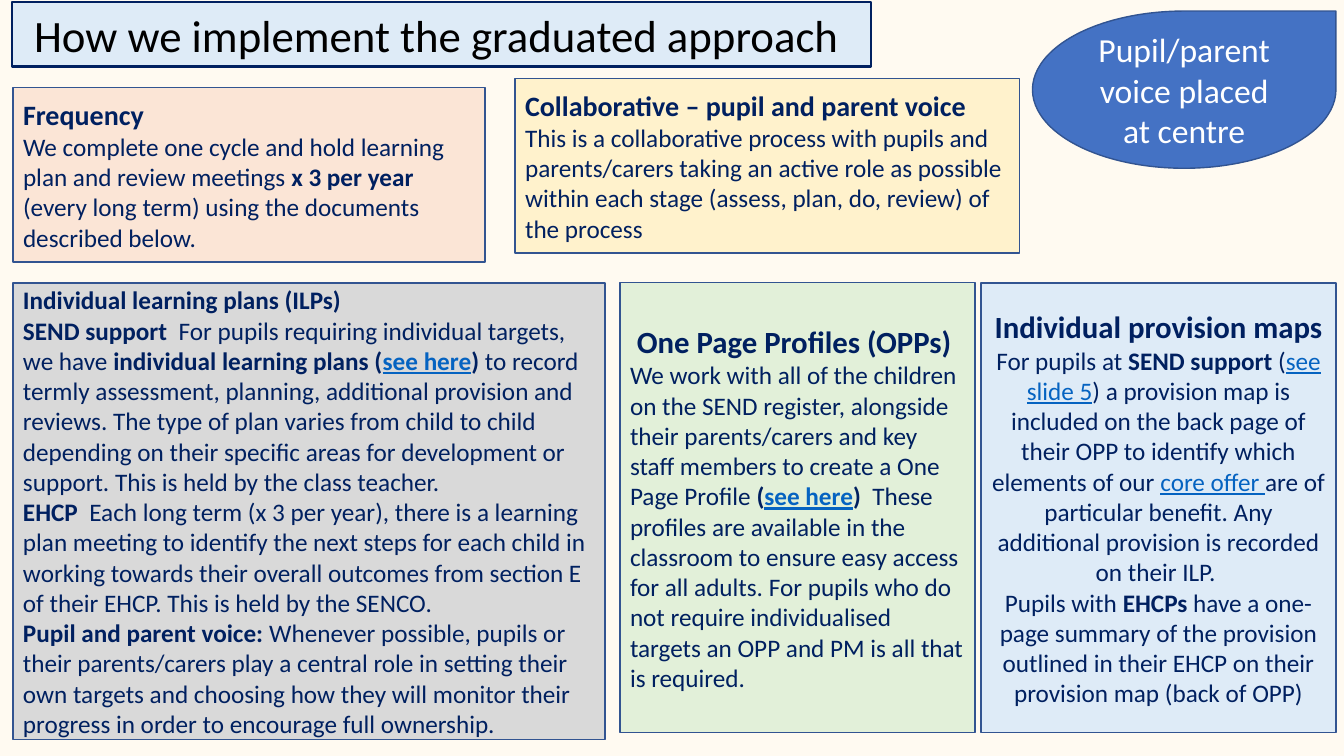
from pptx import Presentation
from pptx.dml.color import RGBColor
from pptx.enum.shapes import MSO_SHAPE
from pptx.enum.text import MSO_ANCHOR, MSO_AUTO_SIZE, PP_ALIGN
from pptx.util import Inches, Pt

CREAM = RGBColor(0xFF, 0xFA, 0xF1)
NAVY = RGBColor(0x00, 0x20, 0x60)
BLACK = RGBColor(0x00, 0x00, 0x00)
WHITE = RGBColor(0xFF, 0xFF, 0xFF)
BLUE = RGBColor(0x44, 0x72, 0xC4)
OUTLINE = RGBColor(0x32, 0x54, 0x91)
LINK = RGBColor(0x05, 0x63, 0xC1)
PALE_BLUE = RGBColor(0xDE, 0xEB, 0xF7)
PEACH = RGBColor(0xFB, 0xE5, 0xD6)
YELLOW = RGBColor(0xFF, 0xF2, 0xCC)
GREEN = RGBColor(0xE2, 0xF0, 0xD9)
GREY = RGBColor(0xD9, 0xD9, 0xD9)

PLAIN, BOLD, LINKED, BOLD_LINKED = "", "b", "u", "bu"

FREQUENCY = [
    [("We complete one cycle and hold learning plan and review meetings ", PLAIN),
     ("x 3 per year ", BOLD),
     ("(every long term) using the documents described below.", PLAIN)],
]
COLLABORATIVE = [
    [("This is a collaborative process with pupils and parents/carers taking an active role "
      "as possible within each stage (assess, plan, do, review) of the process", PLAIN)],
]
PROVISION_MAPS = [
    [("For pupils at ", PLAIN), ("SEND support ", BOLD), ("(", PLAIN), ("see slide 5", LINKED),
     (") a provision map is included on the back page of their OPP to identify which "
      "elements of our ", PLAIN),
     ("core offer ", LINKED),
     ("are of particular benefit. Any additional provision is recorded on their ILP. ", PLAIN)],
    [("Pupils with ", PLAIN), ("EHCPs ", BOLD),
     ("have a one-page summary of the provision outlined in their EHCP on their "
      "provision map (back of OPP)", PLAIN)],
]
ONE_PAGE_PROFILES = [
    [("We work with all of the children on the SEND register, alongside their parents/carers "
      "and key staff members to create a One Page Profile ", PLAIN),
     ("(", BOLD), ("see here", BOLD_LINKED), (") ", BOLD),
     (" These profiles are available in the classroom to ensure easy access for all adults. "
      "For pupils who do not require individualised targets an OPP and PM is all that is "
      "required.", PLAIN)],
]
LEARNING_PLANS = [
    [("SEND support  ", BOLD), ("For pupils requiring individual targets, we have ", PLAIN),
     ("individual learning plans (", BOLD), ("see here", BOLD_LINKED), (") ", BOLD),
     ("to record termly assessment, planning, additional provision and reviews. The type of "
      "plan varies from child to child depending on their specific areas for development or "
      "support. This is held by the class teacher.", PLAIN)],
    [("EHCP  ", BOLD),
     ("Each long term (x 3 per year), there is a learning plan meeting to identify the next "
      "steps for each child in working towards their overall outcomes from section E of their "
      "EHCP. This is held by the SENCO.", PLAIN)],
    [("Pupil and parent voice: ", BOLD),
     ("Whenever possible, pupils or their parents/carers play a central role in setting their "
      "own targets and choosing how they will monitor their progress in order to encourage "
      "full ownership.", PLAIN)],
]


def add_text(paragraph, text, size=18, color=NAVY, bold=False, underline=False):
    """Append one formatted run to a paragraph."""
    run = paragraph.add_run()
    run.text = text
    font = run.font
    font.name = "Calibri"
    font.size = Pt(size)
    font.color.rgb = color
    font.bold = bold
    font.underline = underline


def style_box(shape, fill, line, width):
    """Give a shape its fill, outline and text frame settings."""
    shape.fill.solid()
    shape.fill.fore_color.rgb = fill
    shape.line.color.rgb = line
    shape.line.width = Pt(width)
    frame = shape.text_frame
    frame.word_wrap = True
    frame.auto_size = MSO_AUTO_SIZE.NONE
    frame.vertical_anchor = MSO_ANCHOR.MIDDLE


def add_box(slide, kind, box, fill):
    """Add an outlined preset shape in the given box."""
    shape = slide.shapes.add_shape(kind, *map(Inches, box))
    shape.shadow.inherit = False
    style_box(shape, fill, OUTLINE, 1)
    return shape


def add_title(slide, box):
    """Place the slide title in its framed banner."""
    title = slide.shapes.title
    title.left, title.top, title.width, title.height = map(Inches, box)
    style_box(title, PALE_BLUE, NAVY, 1.75)
    paragraph = title.text_frame.paragraphs[0]
    paragraph.alignment = PP_ALIGN.CENTER
    add_text(paragraph, "How we implement the graduated approach ", size=32, color=BLACK)


def add_voice_callout(slide, box):
    """Place the teardrop about pupil and parent voice."""
    teardrop = add_box(slide, MSO_SHAPE.TEAR, box, BLUE)
    paragraph = teardrop.text_frame.paragraphs[0]
    paragraph.alignment = PP_ALIGN.CENTER
    add_text(paragraph, "Pupil/parent voice placed at centre", size=24, color=WHITE)


def add_panel(slide, box, fill, heading, body, heading_size=20,
              heading_align=PP_ALIGN.LEFT, body_align=PP_ALIGN.LEFT):
    """Place a coloured panel with a bold heading and body paragraphs."""
    frame = add_box(slide, MSO_SHAPE.RECTANGLE, box, fill).text_frame
    paragraph = frame.paragraphs[0]
    paragraph.alignment = heading_align
    add_text(paragraph, heading, size=heading_size, bold=True)
    for runs in body:
        paragraph = frame.add_paragraph()
        paragraph.alignment = body_align
        for text, style in runs:
            linked = "u" in style
            add_text(paragraph, text, color=LINK if linked else NAVY,
                     bold="b" in style, underline=linked)


def main():
    """Build the slide and save it."""
    presentation = Presentation()
    presentation.slide_width = Inches(13.33)
    presentation.slide_height = Inches(7.5)
    slide = presentation.slides.add_slide(presentation.slide_layouts.get_by_name("Title Only"))
    slide.background.fill.solid()
    slide.background.fill.fore_color.rgb = CREAM

    add_title(slide, (0.12, 0.02, 8.52, 0.64))
    add_voice_callout(slide, (10.24, 0.11, 3.01, 1.56))
    add_panel(slide, (0.13, 0.87, 4.68, 1.73), PEACH, "Frequency", FREQUENCY)
    add_panel(slide, (5.11, 0.78, 5, 1.73), YELLOW,
              "Collaborative – pupil and parent voice", COLLABORATIVE)
    add_panel(slide, (9.73, 2.81, 3.52, 4.46), PALE_BLUE, "Individual provision maps",
              PROVISION_MAPS, heading_size=22,
              heading_align=PP_ALIGN.CENTER, body_align=PP_ALIGN.CENTER)
    add_panel(slide, (6.15, 2.8, 3.52, 4.47), GREEN, "One Page Profiles (OPPs) ",
              ONE_PAGE_PROFILES, heading_size=22, heading_align=PP_ALIGN.CENTER)
    add_panel(slide, (0.13, 2.81, 5.87, 4.53), GREY, "Individual learning plans (ILPs)",
              LEARNING_PLANS, heading_size=18)
    presentation.save("out.pptx")


if __name__ == "__main__":
    main()
